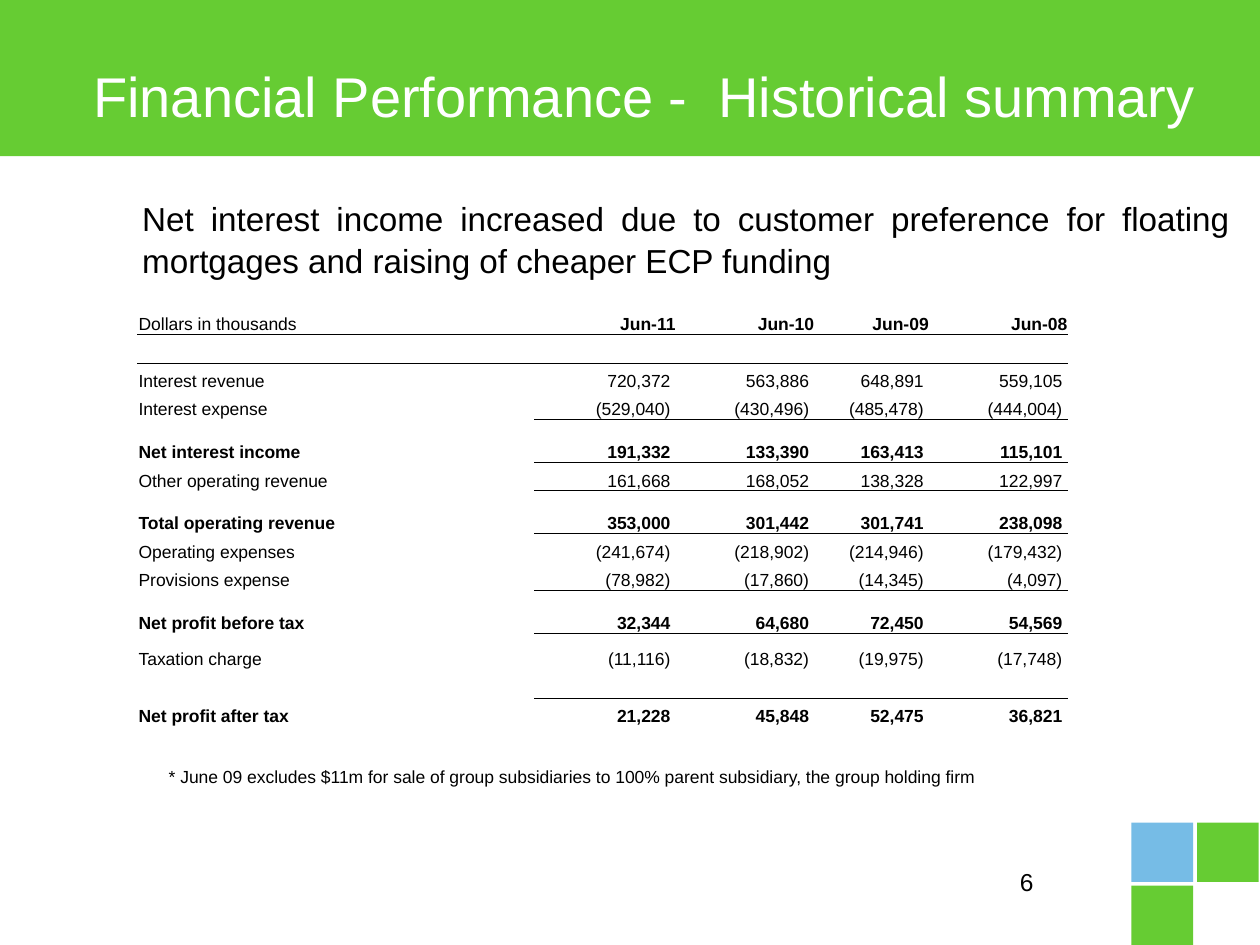
from lxml import etree
from pptx import Presentation
from pptx.dml.color import RGBColor
from pptx.enum.shapes import MSO_SHAPE
from pptx.enum.text import MSO_ANCHOR as Anchor, PP_ALIGN as Align
from pptx.oxml import parse_xml
from pptx.oxml.ns import nsdecls, qn
from pptx.util import Inches, Pt

GREEN = RGBColor(0x66, 0xCC, 0x33)
BLUE = RGBColor(0x76, 0xBC, 0xE6)
BLACK = RGBColor(0, 0, 0)
WHITE = RGBColor(0xFF, 0xFF, 0xFF)
FONT = "Arial"

TITLE = "Financial Performance -  Historical summary"
MESSAGE = ("Net interest income increased due to customer preference for "
           "floating mortgages and raising of cheaper ECP funding")
FOOTNOTE = ("* June 09 excludes $11m for sale of group subsidiaries to 100% "
            "parent subsidiary, the group holding firm")
PAGE_NUMBER = "6"

# Label followed by one value per year; an empty tuple is a spacer row
ROWS = [
    ("Dollars in thousands", "Jun-11", "Jun-10", "Jun-09", "Jun-08"),
    (),
    ("Interest revenue", "720,372", "563,886", "648,891", "559,105"),
    ("Interest expense", "(529,040)", "(430,496)", "(485,478)", "(444,004)"),
    ("Net interest income", "191,332", "133,390", "163,413", "115,101"),
    ("Other operating revenue", "161,668", "168,052", "138,328", "122,997"),
    ("Total operating revenue", "353,000", "301,442", "301,741", "238,098"),
    ("Operating expenses", "(241,674)", "(218,902)", "(214,946)", "(179,432)"),
    ("Provisions expense", "(78,982)", "(17,860)", "(14,345)", "(4,097)"),
    ("Net profit before tax", "32,344", "64,680", "72,450", "54,569"),
    ("Taxation charge", "(11,116)", "(18,832)", "(19,975)", "(17,748)"),
    (),
    ("Net profit after tax", "21,228", "45,848", "52,475", "36,821"),
]
SUBTOTAL_ROWS = {4, 6, 9, 12}
RULED_ROWS = {0} | {row - 1 for row in SUBTOTAL_ROWS}
COLUMN_WIDTHS = [3.15, 1.13, 1.1, 0.91, 1.1]
TABLE_LEFT, TABLE_TOP, TABLE_HEIGHT = 1.09, 2.43, 3.34
TALL_ROWS = {4: 0.34, 6: 0.34, 9: 0.34, 10: 0.29}
NORMAL_ROW = (TABLE_HEIGHT - sum(TALL_ROWS.values())) / (len(ROWS) - len(TALL_ROWS))
NO_STYLE = "{2D5ABB26-0587-4C30-8999-92F81FD0307C}"

# Corner squares as column, row and colour of a grid
SQUARES = [(0, 1, GREEN), (1, 0, GREEN), (0, 0, BLUE)]
SQUARE_LEFT, SQUARE_TOP = 8.98, 6.53
SQUARE_WIDTH, SQUARE_HEIGHT = 0.49, 0.47
PITCH_X, PITCH_Y = 0.52, 0.5


def style_text(paragraph, size, color=BLACK, bold=False):
    for run in paragraph.runs:
        run.font.name = FONT
        run.font.size = Pt(size)
        run.font.bold = bold
        run.font.color.rgb = color


def add_rectangle(slide, left, top, width, height, color):
    shape = slide.shapes.add_shape(
        MSO_SHAPE.RECTANGLE, *map(Inches, (left, top, width, height)))
    shape.shadow.inherit = False
    shape.fill.solid()
    shape.fill.fore_color.rgb = color
    shape.line.fill.background()


def add_text(slide, text, left, top, width, height, size, align=Align.LEFT):
    box = slide.shapes.add_textbox(*map(Inches, (left, top, width, height)))
    box.text_frame.word_wrap = True
    box.text_frame.text = text
    paragraph = box.text_frame.paragraphs[0]
    paragraph.alignment = align
    style_text(paragraph, size)
    return paragraph


def add_border(cell, side):
    """Draw a thin black line on one side: 'T' for top or 'B' for bottom."""
    line = parse_xml(
        f'<a:ln{side} {nsdecls("a")} w="{Pt(0.5)}"><a:solidFill>'
        f'<a:srgbClr val="{BLACK}"/></a:solidFill></a:ln{side}>')
    cell._tc.get_or_add_tcPr().insert(0, line)


def fill_cell(cell, text, row, column):
    is_number = row > 0 and column > 0
    cell.fill.background()
    cell.vertical_anchor = Anchor.BOTTOM
    cell.margin_left = cell.margin_top = Inches(0.01)
    cell.margin_right = Inches(0.05 if is_number else 0.01)
    cell.margin_bottom = 0
    paragraph = cell.text_frame.paragraphs[0]
    if text:
        paragraph.text = text
        paragraph.alignment = Align.RIGHT if column else Align.LEFT
        is_heading = row == 0 and column > 0
        style_text(paragraph, 10, bold=is_heading or row in SUBTOTAL_ROWS)
    else:
        # Keeps a spacer row from growing to the default text size
        etree.SubElement(paragraph._p, qn("a:endParaRPr"), sz="1000")
    if row == 0 or column > 0:
        if row in RULED_ROWS:
            add_border(cell, "B")
    if row - 1 in RULED_ROWS and (row == 1 or column > 0):
        add_border(cell, "T")


def add_results_table(slide):
    frame = slide.shapes.add_table(
        len(ROWS), len(COLUMN_WIDTHS), Inches(TABLE_LEFT), Inches(TABLE_TOP),
        Inches(sum(COLUMN_WIDTHS)), Inches(TABLE_HEIGHT))
    table = frame.table
    table.first_row = table.horz_banding = False
    table._tbl.tblPr.find(qn("a:tableStyleId")).text = NO_STYLE
    for column, width in zip(table.columns, COLUMN_WIDTHS):
        column.width = Inches(width)
    for row, values in enumerate(ROWS):
        table.rows[row].height = Inches(TALL_ROWS.get(row, NORMAL_ROW))
        for column in range(len(COLUMN_WIDTHS)):
            text = values[column] if values else ""
            fill_cell(table.cell(row, column), text, row, column)


def place_title(slide):
    title = slide.shapes.title
    title.left, title.top, title.width, title.height = map(
        Inches, (0.64, 0.39, 9.1, 0.85))
    frame = title.text_frame
    frame.text = TITLE
    frame.word_wrap = True
    frame.vertical_anchor = Anchor.TOP
    frame.margin_top = Inches(0.1)
    frame.paragraphs[0].alignment = Align.LEFT
    style_text(frame.paragraphs[0], 32, WHITE)
    # In front of the green band
    slide.shapes._spTree.append(title._element)


def main():
    presentation = Presentation()
    presentation.slide_width, presentation.slide_height = Inches(10), Inches(7.5)
    slide = presentation.slides.add_slide(presentation.slide_layouts[5])

    add_rectangle(slide, 0, 0, 10, 1.24, GREEN)
    for column, row, color in SQUARES:
        add_rectangle(slide, SQUARE_LEFT + column * PITCH_X,
                      SQUARE_TOP + row * PITCH_Y, SQUARE_WIDTH, SQUARE_HEIGHT, color)
    add_text(slide, PAGE_NUMBER, 6.22, 6.83, 2.08, 0.5, 14, Align.RIGHT)
    place_title(slide)

    message = add_text(slide, MESSAGE, 0.64, 1.51, 9.22, 0.74, 19, Align.JUSTIFY)
    message.line_spacing = 1.05
    message._p.get_or_add_pPr().set("marL", str(Inches(0.39)))

    add_text(slide, FOOTNOTE, 1.24, 6.03, 7.51, 0.27, 10)
    add_results_table(slide)
    presentation.save("out.pptx")


if __name__ == "__main__":
    main()
